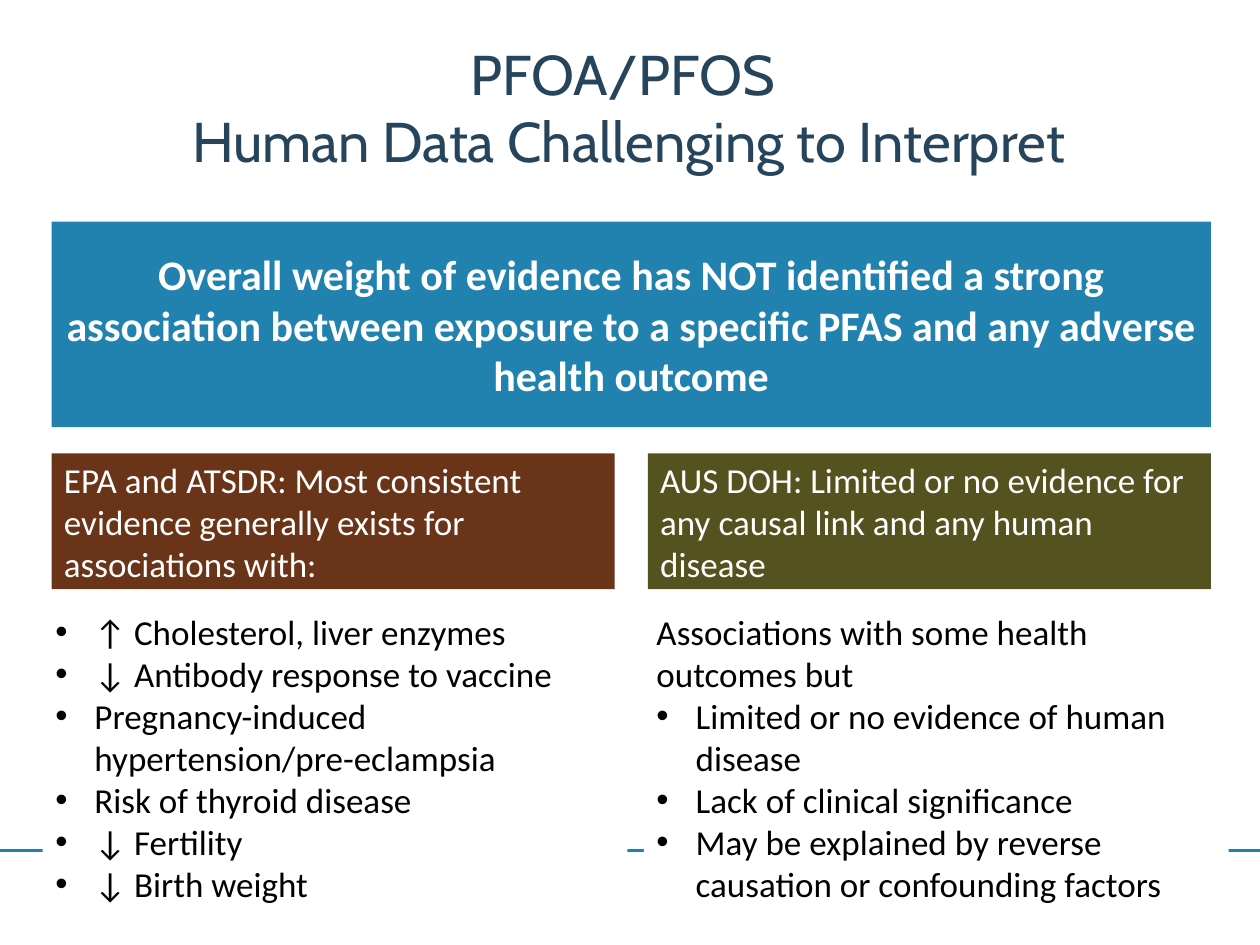
from dataclasses import dataclass

from lxml import etree
from pptx import Presentation
from pptx.dml.color import RGBColor
from pptx.enum.shapes import MSO_CONNECTOR, MSO_SHAPE
from pptx.enum.text import MSO_ANCHOR, MSO_AUTO_SIZE, PP_ALIGN
from pptx.oxml.ns import qn
from pptx.shapes.base import BaseShape
from pptx.slide import Slide
from pptx.util import Cm, Pt

RECTANGLE = MSO_SHAPE.RECTANGLE
STRAIGHT = MSO_CONNECTOR.STRAIGHT
MIDDLE, TOP = MSO_ANCHOR.MIDDLE, MSO_ANCHOR.TOP
CENTER, LEFT = PP_ALIGN.CENTER, PP_ALIGN.LEFT
NO_FIT, GROW = MSO_AUTO_SIZE.NONE, MSO_AUTO_SIZE.SHAPE_TO_FIT_TEXT

SLIDE_WIDTH, SLIDE_HEIGHT = 25.4, 19.05
TWO_CONTENT_LAYOUT = 3
MARGIN = 1.04
BULLET_INDENT = 0.79
WHITE, BLACK, NAVY, BLUE = "FFFFFF", "000000", "26455C", "2282AF"
BROWN, OLIVE, RULE_BLUE = "6A3418", "545320", "1E80AF"


@dataclass(frozen=True)
class Box:
    """Position and size in centimetres."""
    left: float
    top: float
    width: float
    height: float


@dataclass(frozen=True)
class TextStyle:
    size: int
    color: str
    align: PP_ALIGN = LEFT
    font: str = "Calibri"
    bold: bool = False


@dataclass(frozen=True)
class Column:
    """One agency's finding; the intro is a first line without a bullet."""
    placeholder: int
    header_left: float
    list_left: float
    color: str
    header: str
    intro: tuple[str, ...]
    bullets: tuple[str, ...]


TITLE_STYLE = TextStyle(32, NAVY, CENTER, "Cabin")
BANNER_STYLE = TextStyle(24, WHITE, CENTER, bold=True)
HEADER_STYLE = TextStyle(20, WHITE)
LIST_STYLE = TextStyle(20, BLACK)

COLUMNS = (
    Column(1, MARGIN, 0.86, BROWN,
           "EPA and ATSDR: Most consistent evidence generally exists for "
           "associations with:",
           (),
           ("↑ Cholesterol, liver enzymes",
            "↓ Antibody response to vaccine",
            "Pregnancy-induced hypertension/pre-eclampsia",
            "Risk of thyroid disease",
            "↓ Fertility",
            "↓ Birth weight")),
    Column(2, 13.06, 12.98, OLIVE,
           "AUS DOH: Limited or no evidence for any causal link and any "
           "human disease",
           ("Associations with some health outcomes but",),
           ("Limited or no evidence of human disease",
            "Lack of clinical significance",
            "May be explained by reverse causation or confounding factors")),
)


def rgb(color: str) -> RGBColor:
    return RGBColor.from_string(color)


def place(shape: BaseShape, box: Box) -> None:
    shape.left, shape.top = Cm(box.left), Cm(box.top)
    shape.width, shape.height = Cm(box.width), Cm(box.height)


def fill(shape: BaseShape, color: str) -> None:
    shape.fill.solid()
    shape.fill.fore_color.rgb = rgb(color)


def write(shape: BaseShape, text: str, style: TextStyle,
          anchor: MSO_ANCHOR = MIDDLE) -> None:
    frame = shape.text_frame
    frame.text = text
    frame.word_wrap = True
    frame.auto_size = NO_FIT
    frame.vertical_anchor = anchor
    for paragraph in frame.paragraphs:
        paragraph.alignment = style.align
        paragraph.space_before = Pt(0)
        for run in paragraph.runs:
            run.font.name = style.font
            run.font.size = Pt(style.size)
            run.font.bold = style.bold
            run.font.color.rgb = rgb(style.color)


def add_panel(slide: Slide, box: Box, color: str, text: str,
              style: TextStyle) -> None:
    panel = slide.shapes.add_shape(RECTANGLE, 0, 0, 0, 0)
    place(panel, box)
    panel.shadow.inherit = False
    panel.line.fill.background()
    fill(panel, color)
    write(panel, text, style)


def add_rule(slide: Slide, top: float) -> None:
    """Draw the footer rule behind everything else."""
    rule = slide.shapes.add_connector(
        STRAIGHT, Cm(0), Cm(top), Cm(SLIDE_WIDTH), Cm(top))
    rule.line.color.rgb = rgb(RULE_BLUE)
    rule.line.width = Pt(1.5)
    etree.SubElement(rule.element.spPr, qn("a:effectLst"))
    slide.shapes.title.element.addprevious(rule.element)


def add_column(slide: Slide, column: Column) -> None:
    add_panel(slide, Box(column.header_left, 9.14, 11.35, 2.74),
              column.color, column.header, HEADER_STYLE)
    findings = slide.placeholders[column.placeholder]
    place(findings, Box(column.list_left, 12.17, 11.79, 6.25))
    fill(findings, WHITE)
    write(findings, "\n".join(column.intro + column.bullets), LIST_STYLE, TOP)
    findings.text_frame.auto_size = GROW
    for index, paragraph in enumerate(findings.text_frame.paragraphs):
        bulleted = index >= len(column.intro)
        indent = Cm(BULLET_INDENT) if bulleted else 0
        properties = paragraph._p.get_or_add_pPr()
        properties.set("marL", str(indent))
        properties.set("indent", str(-indent))
        if bulleted:
            etree.SubElement(properties, qn("a:buFont"), typeface="Arial")
            etree.SubElement(properties, qn("a:buChar"), char="•")
        else:
            etree.SubElement(properties, qn("a:buNone"))


def main() -> None:
    presentation = Presentation()
    presentation.slide_width = Cm(SLIDE_WIDTH)
    presentation.slide_height = Cm(SLIDE_HEIGHT)
    slide = presentation.slides.add_slide(
        presentation.slide_layouts[TWO_CONTENT_LAYOUT])

    add_rule(slide, 17.15)
    title = slide.shapes.title
    place(title, Box(1.4, 1.19, 22.56, 1.91))
    write(title, "PFOA/PFOS \vHuman Data Challenging to Interpret", TITLE_STYLE)
    add_panel(slide, Box(MARGIN, 4.47, 23.37, 4.14), BLUE,
              "Overall weight of evidence has NOT identified a strong "
              "association between exposure to a specific PFAS and any "
              "adverse health outcome", BANNER_STYLE)
    for column in COLUMNS:
        add_column(slide, column)

    presentation.save("out.pptx")


if __name__ == "__main__":
    main()
